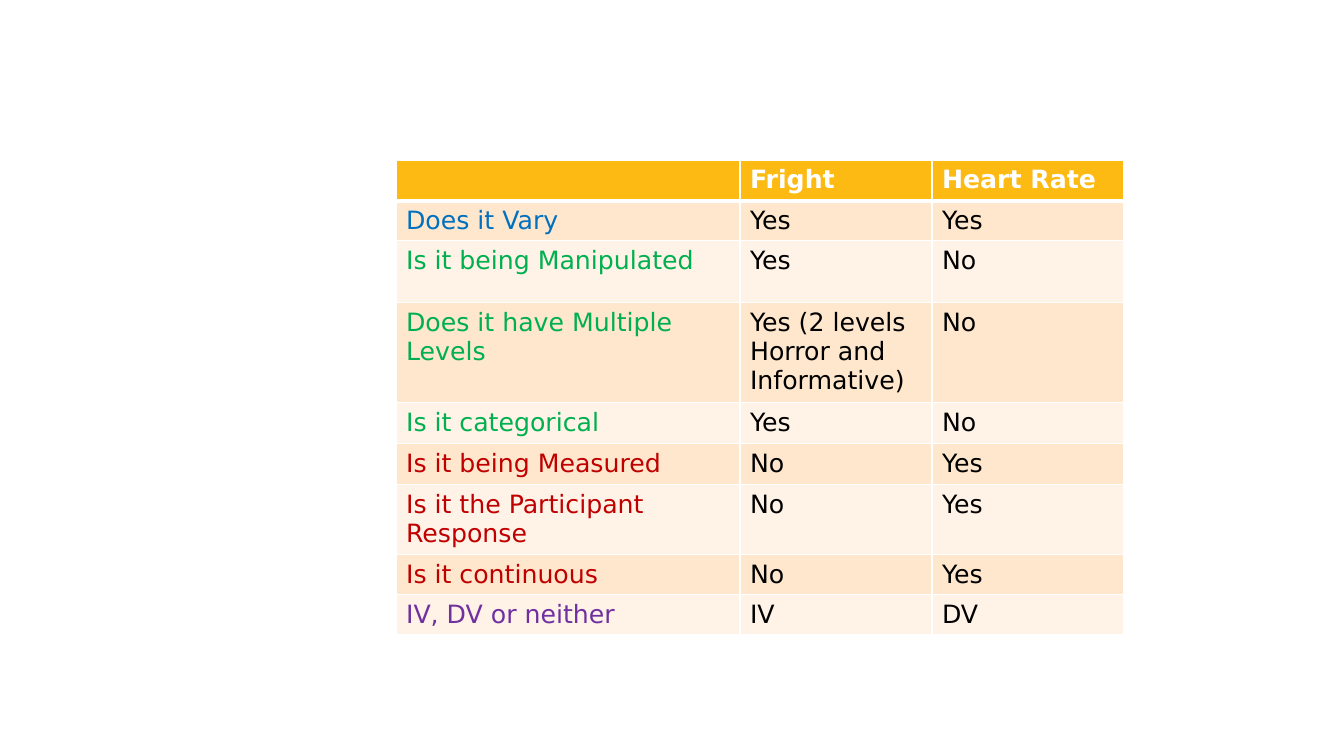
import dataclasses

import lxml.etree
import pptx
import pptx.dml.color
import pptx.oxml.ns
import pptx.util

EMU_PER_PX = 914400 / 100.8


@dataclasses.dataclass(frozen=True)
class Theme:
    font: str = "DejaVu Sans"
    body_size: int = 18
    header_fill: str = "FDBA12"
    band_fills: tuple = ("FEE7CC", "FFF3E7")
    white: str = "FFFFFF"
    black: str = "000000"
    blue: str = "0070C0"
    green: str = "00B050"
    red: str = "C00000"
    purple: str = "7030A0"
    thin_border: int = 1
    thick_border: int = 3


THEME = Theme()
HEADER = ("", "Fright", "Heart Rate")
COLUMN_WIDTHS = (344, 192, 192)
HEADER_HEIGHT = 40
QUESTIONS = (
    (40, THEME.blue, "Does it Vary", "Yes", "Yes"),
    (62, THEME.green, "Is it being Manipulated", "Yes", "No"),
    (100, THEME.green, "Does it have Multiple Levels",
     "Yes (2 levels\nHorror and Informative)", "No"),
    (41, THEME.green, "Is it categorical", "Yes", "No"),
    (41, THEME.red, "Is it being Measured", "No", "Yes"),
    (70, THEME.red, "Is it the Participant Response", "No", "Yes"),
    (40, THEME.red, "Is it continuous", "No", "Yes"),
    (40, THEME.purple, "IV, DV or neither", "IV", "DV"),
)


def px(length):
    return pptx.util.Emu(round(length * EMU_PER_PX))


def rgb(colour):
    return pptx.dml.color.RGBColor.from_string(colour)


def write_text(frame, text, *, font, size, colour, bold=False):
    frame.text = text
    for para in frame.paragraphs:
        para.font.size = pptx.util.Pt(size)
        for span in para.runs:
            span.font.name = font
            span.font.size = pptx.util.Pt(size)
            span.font.bold = bold
            span.font.color.rgb = rgb(colour)


class SlideBuilder:
    def __init__(self, deck, theme):
        self.theme = theme
        self.page = deck.slides.add_slide(deck.slide_layouts[6])

    def table(self, left, top, widths, heights):
        frame = self.page.shapes.add_table(
            len(heights), len(widths), px(left), px(top),
            px(sum(widths)), px(sum(heights)))
        for column, width in zip(frame.table.columns, widths):
            column.width = px(width)
        for row, height in zip(frame.table.rows, heights):
            row.height = px(height)
        return frame.table

    def cell(self, cell, text, fill, colour, bold=False, top=1, bottom=1):
        write_text(cell.text_frame, text, font=self.theme.font,
                   size=self.theme.body_size, colour=colour, bold=bold)
        cell.fill.solid()
        cell.fill.fore_color.rgb = rgb(fill)
        thin = self.theme.thin_border
        self.borders(cell, {"lnL": thin, "lnR": thin, "lnT": top, "lnB": bottom})

    def borders(self, cell, widths):
        qn = pptx.oxml.ns.qn
        properties = cell._tc.get_or_add_tcPr()
        for position, (side, width) in enumerate(widths.items()):
            line = lxml.etree.Element(qn(f"a:{side}"), w=str(pptx.util.Pt(width)))
            solid = lxml.etree.SubElement(line, qn("a:solidFill"))
            lxml.etree.SubElement(solid, qn("a:srgbClr"), val=self.theme.white)
            properties.insert(position, line)


def main():
    deck = pptx.Presentation()
    deck.slide_width = px(1344)
    deck.slide_height = px(756)
    builder = SlideBuilder(deck, THEME)

    heights = [HEADER_HEIGHT] + [question[0] for question in QUESTIONS]
    table = builder.table(396, 160, COLUMN_WIDTHS, heights)
    for column, text in enumerate(HEADER):
        builder.cell(table.cell(0, column), text, THEME.header_fill, THEME.white,
                     bold=True, bottom=THEME.thick_border)
    for row, (_, colour, *texts) in enumerate(QUESTIONS, start=1):
        fill = THEME.band_fills[(row - 1) % 2]
        top = THEME.thick_border if row == 1 else THEME.thin_border
        for column, text in enumerate(texts):
            builder.cell(table.cell(row, column), text, fill,
                         THEME.black if column else colour, top=top)

    deck.save("out.pptx")


if __name__ == "__main__":
    main()
